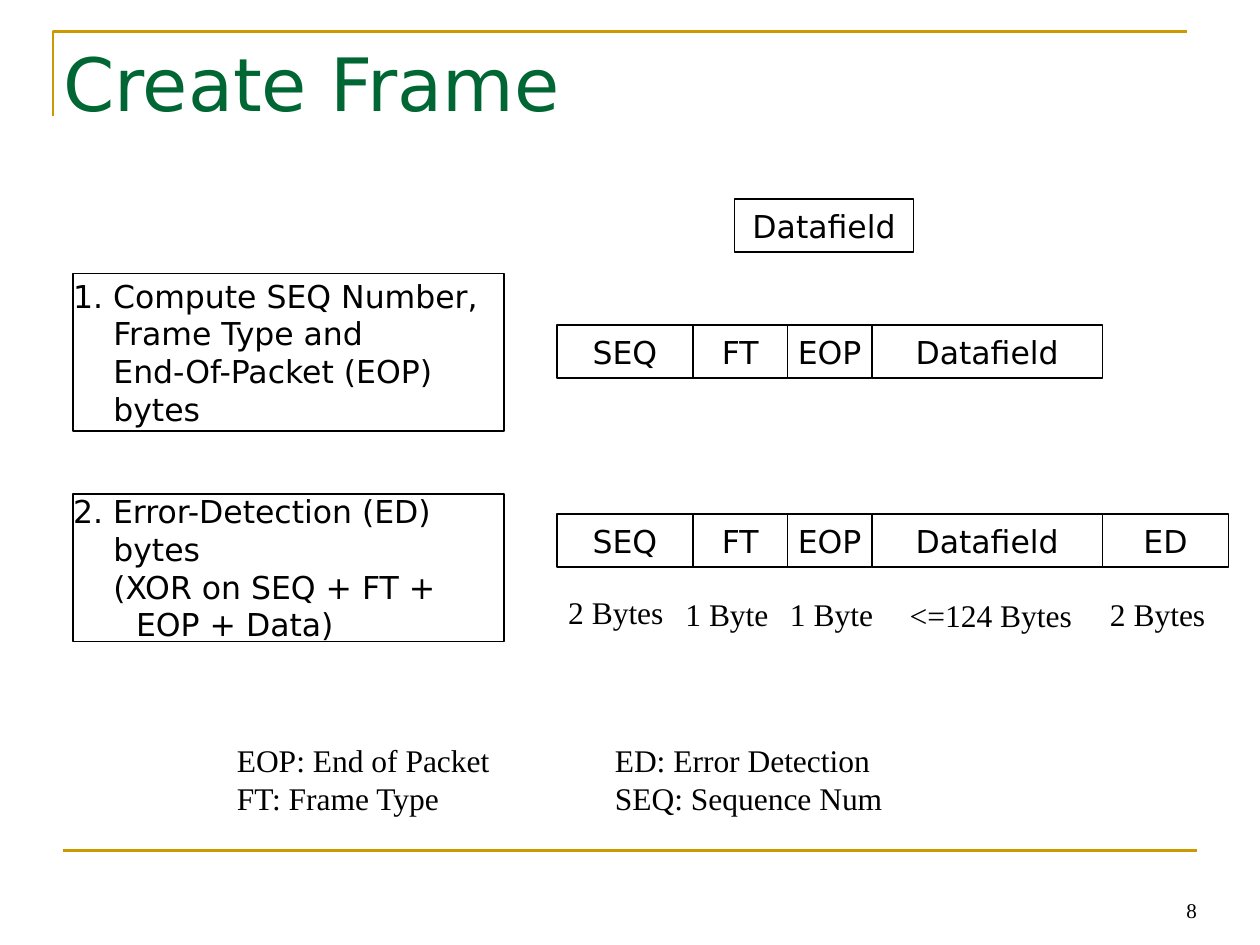
from lxml import etree
from pptx import Presentation, util as u
from pptx.dml.color import RGBColor
from pptx.enum import shapes, text
from pptx.oxml.ns import qn

Inches = u.Inches
GOLD = RGBColor(0xCC, 0x99, 0x00)
GREEN = RGBColor(0x00, 0x66, 0x33)
BLACK = RGBColor(0, 0, 0)
SANS, SERIF = "DejaVu Sans", "Times New Roman"
LEFT, CENTER, RIGHT = text.PP_ALIGN.LEFT, text.PP_ALIGN.CENTER, text.PP_ALIGN.RIGHT
TOP, MIDDLE, BOTTOM = text.MSO_ANCHOR.TOP, text.MSO_ANCHOR.MIDDLE, text.MSO_ANCHOR.BOTTOM


def write(holder, lines, size=18, font=SANS, color=BLACK, align=LEFT,
          anchor=TOP, inset=0, wrap=False):
    frame = holder.text_frame
    frame.text = "\n".join(lines)
    margin = Inches(inset)
    layout = {"margin_left": margin, "margin_top": margin, "margin_right": margin,
              "margin_bottom": margin, "vertical_anchor": anchor,
              "auto_size": text.MSO_AUTO_SIZE.NONE, "word_wrap": wrap}
    for key, value in layout.items():
        setattr(frame, key, value)
    for paragraph in frame.paragraphs:
        paragraph.alignment = align
        for run in paragraph.runs:
            for key, value in {"size": u.Pt(size), "name": font}.items():
                setattr(run.font, key, value)
            run.font.color.rgb = color
    return frame


def add_box(left, top, width, height, lines, **style):
    box = slide.shapes.add_shape(shapes.MSO_SHAPE.RECTANGLE, Inches(left),
                                 Inches(top), Inches(width), Inches(height))
    box.shadow.inherit = False
    box.fill.background()
    box.line.color.rgb = BLACK
    box.line.width = u.Pt(0.75)
    return write(box, lines, anchor=MIDDLE, **style)


prs = Presentation()
prs.slide_width, prs.slide_height = Inches(10), Inches(7.5)
slide = prs.slides.add_slide(prs.slide_layouts[5])

builder = slide.shapes.build_freeform(Inches(0.42), Inches(0.92))
builder.add_line_segments([(Inches(0.42), Inches(0.25)), (Inches(9.42), Inches(0.25))],
                          close=False)
title_rule = builder.convert_to_shape()
title_rule.fill.background()
title_rule.shadow.inherit = False
footer_rule = slide.shapes.add_connector(shapes.MSO_CONNECTOR.STRAIGHT, Inches(0.5),
                                         Inches(6.75), Inches(9.5), Inches(6.75))
etree.SubElement(footer_rule._element.spPr, qn("a:effectLst"))
for rule in (title_rule, footer_rule):
    rule.line.color.rgb = GOLD
    rule.line.width = u.Pt(1.5)

title = slide.shapes.title
for key, value in {"left": 0.5, "top": 0.3, "width": 9, "height": 1.25}.items():
    setattr(title, key, Inches(value))
write(title, ["Create Frame"], size=42, color=GREEN, wrap=True)

steps = [
    (2.17, 1.25, ["1. Compute SEQ Number,", "Frame Type and",
                  "End-Of-Packet (EOP)", "bytes"]),
    (3.92, 1.17, ["2. Error-Detection (ED)", "bytes",
                  "(XOR on SEQ + FT + EOP + Data)"]),
]
for top, height, lines in steps:
    step = add_box(0.58, top, 3.42, height, lines, wrap=True)
    for number, paragraph in enumerate(step.paragraphs):
        indent = -0.18 if number else -0.5
        paragraph._p.get_or_add_pPr().set("marL", str(Inches(0.5)))
        paragraph._p.get_or_add_pPr().set("indent", str(Inches(indent)))

FIELD_HEIGHT = 0.42
fields = [("SEQ", 1.08), ("FT", 0.75), ("EOP", 0.67), ("Datafield", 1.83), ("ED", 1)]
add_box(5.83, 1.58, 1.42, FIELD_HEIGHT, ["Datafield"], align=CENTER)
for top, frame_fields in ((2.58, fields[:-1]), (4.08, fields)):
    left = 4.42
    for field, width in frame_fields:
        add_box(left, top, width, FIELD_HEIGHT, [field], align=CENTER)
        left += width

captions = [
    (4.46, 4.66, 0.87, 0.42, ["2 Bytes"]),
    (5.39, 4.67, 0.77, 0.42, ["1 Byte"]),
    (6.22, 4.67, 0.77, 0.42, ["1 Byte"]),
    (7.17, 4.68, 1.4, 0.42, ["<=124 Bytes"]),
    (8.76, 4.67, 0.87, 0.42, ["2 Bytes"]),
    (1.83, 5.83, 5.24, 0.74, ["EOP: End of Packet\tED: Error Detection",
                              "FT: Frame Type\tSEQ: Sequence Num"]),
]
for left, top, width, height, lines in captions:
    caption = slide.shapes.add_textbox(Inches(left), Inches(top), Inches(width),
                                       Inches(height))
    legend = write(caption, lines, font=SERIF, inset=0.05)
for paragraph in legend.paragraphs:
    stops = etree.SubElement(paragraph._p.get_or_add_pPr(), qn("a:tabLst"))
    etree.SubElement(stops, qn("a:tab"), pos=str(Inches(3)), algn="l")

page = slide.shapes.add_textbox(Inches(7.17), Inches(7.03), Inches(2.33), Inches(0.29))
number = write(page, ["8"], size=12, font=SERIF, align=RIGHT, anchor=BOTTOM, wrap=True)

prs.save("out.pptx")
